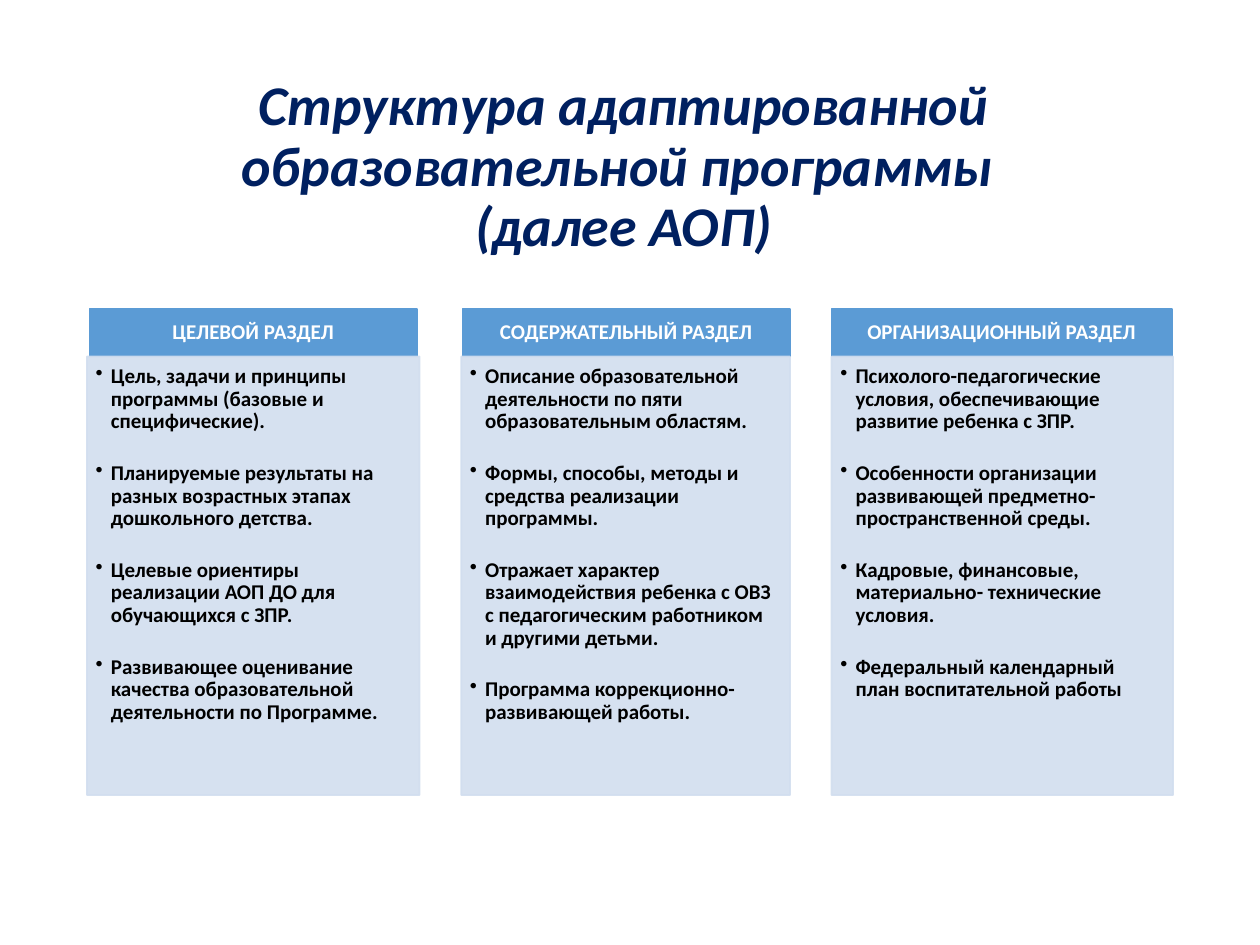
from lxml import etree
from pptx import Presentation
from pptx.dml.color import RGBColor
from pptx.enum.shapes import MSO_SHAPE
from pptx.enum.text import MSO_ANCHOR, MSO_AUTO_SIZE, PP_ALIGN
from pptx.oxml.ns import qn
from pptx.util import Inches, Pt

RECTANGLE = MSO_SHAPE.RECTANGLE
TOP, MIDDLE = MSO_ANCHOR.TOP, MSO_ANCHOR.MIDDLE
LEFT, CENTER = PP_ALIGN.LEFT, PP_ALIGN.CENTER
NO_AUTOFIT = MSO_AUTO_SIZE.NONE

FONT = "Calibri"
COLORS = {
    "title": "002060",
    "header": "5B9BD5",
    "header_text": "FFFFFF",
    "body": "D2DEEF",
    "body_text": "000000",
}

TITLE = "Структура адаптированной образовательной программы \v(далее АОП)"
HEADER_TOP, HEADER_HEIGHT = 2.45, 0.38
BODY_TOP, BODY_HEIGHT = 2.83, 3.48
BODY_OPACITY = 90
BULLET_INDENT = 0.12
ITEM_GAP = 16.5

# Heading, header (left, width), body (left, width), items
SECTIONS = [
    ("ЦЕЛЕВОЙ РАЗДЕЛ", (0.71, 2.6), (0.69, 2.64), [
        "Цель, задачи и принципы программы (базовые и специфические).",
        "Планируемые результаты на разных возрастных этапах дошкольного детства.",
        "Целевые ориентиры реализации АОП ДО для обучающихся с ЗПР.",
        "Развивающее оценивание качества образовательной деятельности по Программе.",
    ]),
    ("СОДЕРЖАТЕЛЬНЫЙ РАЗДЕЛ", (3.67, 2.6), (3.66, 2.61), [
        "Описание образовательной деятельности по пяти образовательным областям.",
        "Формы, способы, методы и средства реализации программы.",
        "Отражает характер взаимодействия ребенка с ОВЗ с педагогическим "
        "работником и другими детьми.",
        "Программа коррекционно- развивающей работы.",
    ]),
    ("ОРГАНИЗАЦИОННЫЙ РАЗДЕЛ", (6.6, 2.7), (6.6, 2.71), [
        "Психолого-педагогические условия, обеспечивающие развитие ребенка с ЗПР.",
        "Особенности организации развивающей предметно-пространственной среды.",
        "Кадровые, финансовые, материально- технические условия.",
        "Федеральный календарный план воспитательной работы",
    ]),
]


def format_paragraph(para, size, color, align):
    para.alignment = align
    para.line_spacing = 0.9
    para.font.name = FONT
    para.font.size = Pt(size)
    para.font.bold = True
    para.font.color.rgb = RGBColor.from_string(COLORS[color])


def add_bullet(para):
    properties = para._p.get_or_add_pPr()
    properties.set("marL", str(Inches(BULLET_INDENT)))
    properties.set("indent", str(-Inches(BULLET_INDENT)))
    etree.SubElement(properties, qn("a:buChar"), char="•")


def set_opacity(box, percent):
    for color in box._element.spPr.iter(qn("a:srgbClr")):
        etree.SubElement(color, qn("a:alpha"), val=str(percent * 1000))


def add_panel(slide, left, top, width, height, color, anchor, insets):
    box = slide.shapes.add_shape(
        RECTANGLE, Inches(left), Inches(top), Inches(width), Inches(height))
    box.shadow.inherit = False
    box.fill.solid()
    box.fill.fore_color.rgb = RGBColor.from_string(COLORS[color])
    box.line.color.rgb = RGBColor.from_string(COLORS[color])
    box.line.width = Pt(1)
    frame = box.text_frame
    frame.word_wrap = True
    frame.vertical_anchor = anchor
    (frame.margin_left, frame.margin_top,
     frame.margin_right, frame.margin_bottom) = map(Inches, insets)
    return box


def add_title(slide):
    title = slide.shapes.title
    title.left, title.top = Inches(0.64), Inches(0.61)
    title.width, title.height = Inches(8.62), Inches(1.45)
    frame = title.text_frame
    frame.text = TITLE
    frame.word_wrap = True
    frame.auto_size = NO_AUTOFIT
    frame.vertical_anchor = MIDDLE
    para = frame.paragraphs[0]
    format_paragraph(para, 32, "title", CENTER)
    para.font.italic = True


def add_header(slide, heading, left, width):
    box = add_panel(slide, left, HEADER_TOP, width, HEADER_HEIGHT,
                    "header", MIDDLE, (0.09, 0.05, 0.09, 0.05))
    box.text_frame.text = heading
    format_paragraph(box.text_frame.paragraphs[0], 12, "header_text", CENTER)


def add_body(slide, items, left, width):
    box = add_panel(slide, left, BODY_TOP, width, BODY_HEIGHT,
                    "body", TOP, (0.07, 0.07, 0.09, 0.1))
    set_opacity(box, BODY_OPACITY)
    box.text_frame.text = "\n".join(items)
    for para in box.text_frame.paragraphs:
        add_bullet(para)
        format_paragraph(para, 12, "body_text", LEFT)
        para.space_after = Pt(ITEM_GAP)


def main():
    deck = Presentation()
    deck.slide_width, deck.slide_height = Inches(10), Inches(7.5)
    slide = deck.slides.add_slide(deck.slide_layouts.get_by_name("Title Only"))

    add_title(slide)
    # One column per section: header above its list
    for heading, header_span, body_span, items in SECTIONS:
        add_header(slide, heading, *header_span)
        add_body(slide, items, *body_span)

    deck.save("out.pptx")


if __name__ == "__main__":
    main()
